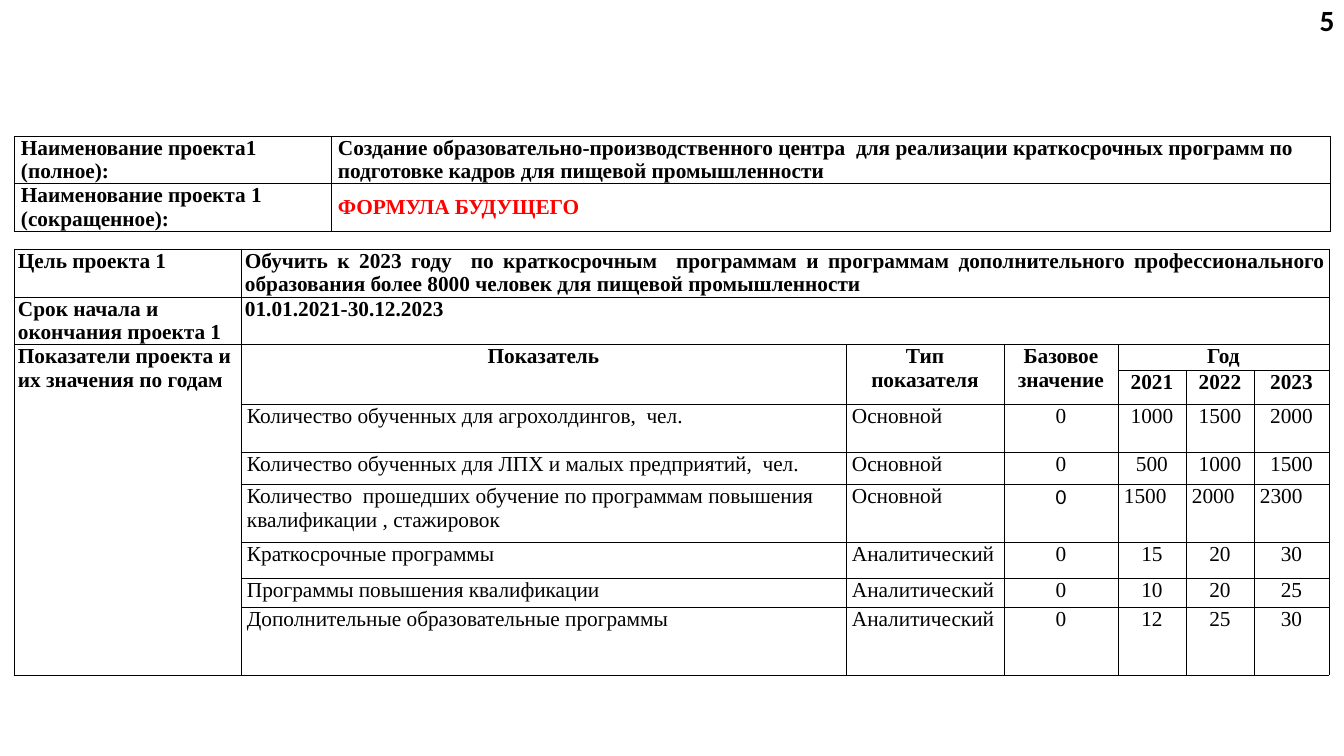
"""Builds a one-slide project card with a name table and an indicator table."""
from lxml import etree
from pptx import Presentation
from pptx.dml.color import RGBColor
from pptx.enum.text import MSO_ANCHOR, PP_ALIGN
from pptx.oxml.ns import qn
from pptx.util import Pt

PX = 9525
LEFT, MID, RIGHT, JUST = PP_ALIGN.LEFT, PP_ALIGN.CENTER, PP_ALIGN.RIGHT, PP_ALIGN.JUSTIFY
CENTRE = MSO_ANCHOR.MIDDLE
SERIF, SANS = "Times New Roman", "Calibri"
BLACK, RED = "000000", "FF0000"


def write(frame, text, size=16, bold=True, align=LEFT, font=SERIF, color=BLACK):
    frame.text = text
    frame.word_wrap = True
    para = frame.paragraphs[0]
    para.alignment = align
    for run in para.runs:
        run.font.size = Pt(size)
        run.font.bold = bold
        run.font.name = font
        run.font.color.rgb = RGBColor.from_string(color)


def grid(slide, left, top, cols, rows):
    frame = slide.shapes.add_table(len(rows), len(cols), left * PX, top * PX,
                                   sum(cols) * PX, sum(rows) * PX)
    table = frame.table
    table.first_row = table.horz_banding = False
    for col, width in zip(table.columns, cols):
        col.width = width * PX
    for row, height in zip(table.rows, rows):
        row.height = height * PX
    for cell in table.iter_cells():
        cell.margin_top = cell.margin_bottom = 0
        props = cell._tc.get_or_add_tcPr()
        for side in ("a:lnL", "a:lnR", "a:lnT", "a:lnB"):
            line = etree.SubElement(props, qn(side), w=str(Pt(0.25)))
            fill = etree.SubElement(line, qn("a:solidFill"))
            etree.SubElement(fill, qn("a:srgbClr"), val=BLACK)
        cell.fill.background()
    return table


deck = Presentation()
deck.slide_width, deck.slide_height = 1344 * PX, 756 * PX
slide = deck.slides.add_slide(deck.slide_layouts[6])

names = [
    ("Наименование проекта1 (полное):",
     "Создание образовательно-производственного центра  для реализации "
     "краткосрочных программ по подготовке кадров для пищевой промышленности"),
    ("Наименование проекта 1 (сокращенное):", "ФОРМУЛА БУДУЩЕГО"),
]
table = grid(slide, 14, 136, [317, 999], [47, 48])
for r, row in enumerate(names):
    for c, text in enumerate(row):
        cell = table.cell(r, c)
        cell.margin_left = cell.margin_right = 7 * PX
        write(cell.text_frame, text, color=RED if (r, c) == (1, 1) else BLACK)
table.cell(1, 1).vertical_anchor = CENTRE

goals = [
    ("Цель проекта 1",
     "Обучить к 2023 году  по краткосрочным  программам и программам "
     "дополнительного профессионального образования более 8000 человек "
     "для пищевой промышленности"),
    ("Срок начала и окончания проекта 1", "01.01.2021-30.12.2023"),
    ("Показатели проекта и их значения по годам", "Показатель", "Тип показателя",
     "Базовое значение", "Год"),
    ("", "", "", "", "2021", "2022", "2023"),
    ("", "Количество обученных для агрохолдингов,  чел.",
     "Основной", "0", "1000", "1500", "2000"),
    ("", "Количество обученных для ЛПХ и малых предприятий,  чел.",
     "Основной", "0", "500", "1000", "1500"),
    ("", "Количество  прошедших обучение по программам повышения "
     "квалификации , стажировок", "Основной", "0", "1500", "2000", "2300"),
    ("", "Краткосрочные программы", "Аналитический", "0", "15", "20", "30"),
    ("", "Программы повышения квалификации", "Аналитический", "0", "10", "20", "25"),
    ("", "Дополнительные образовательные программы",
     "Аналитический", "0", "12", "25", "30"),
]
table = grid(slide, 14, 249, [227, 605, 158, 114, 68, 68, 75],
             [48, 47, 26, 34, 48, 32, 58, 36, 29, 68])
spans = [(0, 1, 0, 6), (1, 1, 1, 6), (2, 0, 9, 0), (2, 1, 3, 1),
         (2, 2, 3, 2), (2, 3, 3, 3), (2, 4, 2, 6)]
for top, left, end, last in spans:
    table.cell(top, left).merge(table.cell(end, last))

for r, row in enumerate(goals):
    for c, text in enumerate(row):
        if not text:
            continue
        cell = table.cell(r, c)
        head = r < 4
        cell.margin_left = cell.margin_right = (4 if head else 6) * PX
        if c == 0 or (not head and c < 3) or (r == 6 and c > 3):
            align = LEFT
        else:
            align = JUST if r < 2 else MID
        font = SANS if (r, c) == (6, 3) else SERIF
        write(cell.text_frame, text, bold=head, align=align, font=font)

page = slide.shapes.add_textbox(1030 * PX, 0, 314 * PX, 40 * PX)
page.text_frame.vertical_anchor = CENTRE
write(page.text_frame, "5", size=22, align=RIGHT, font=SANS)

deck.save("out.pptx")
